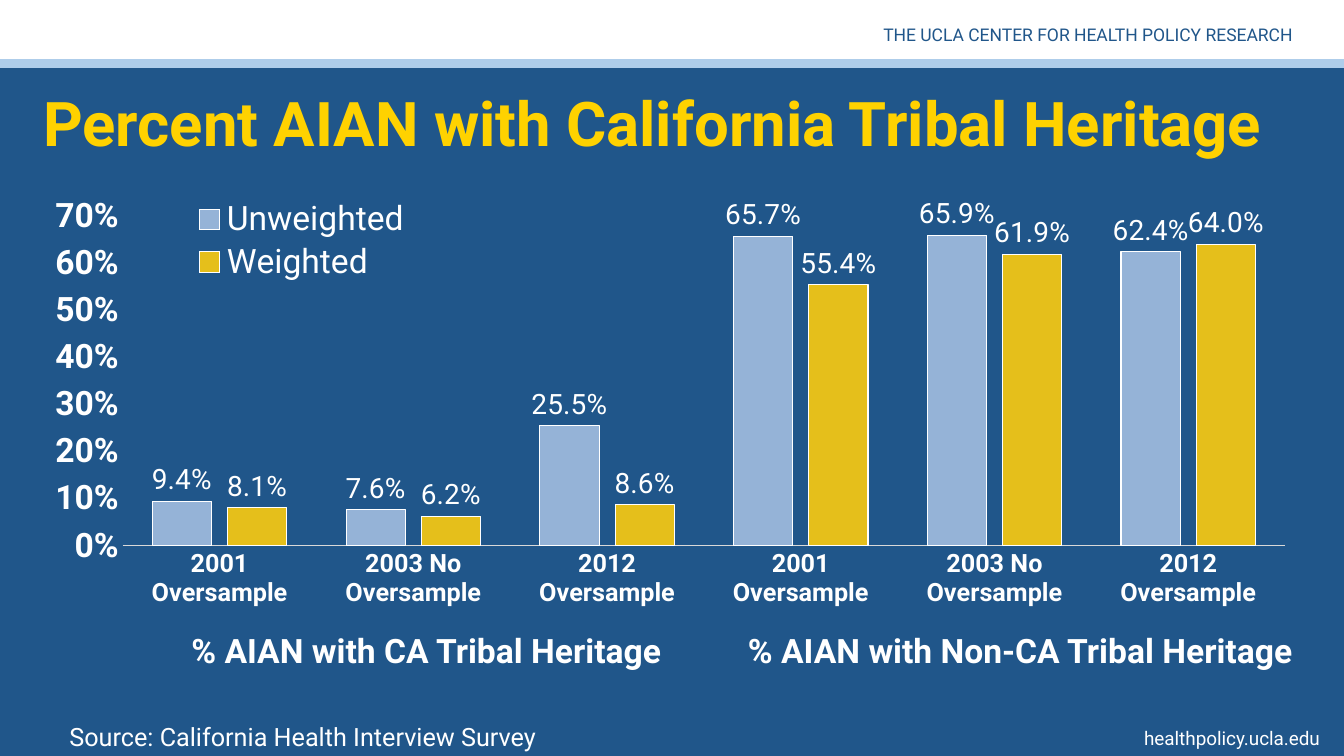
from dataclasses import dataclass

from lxml import etree
from pptx import Presentation
from pptx.chart.data import CategoryChartData
from pptx.dml.color import RGBColor
from pptx.enum.chart import XL_CHART_TYPE, XL_LABEL_POSITION, XL_LEGEND_POSITION, XL_TICK_MARK
from pptx.enum.shapes import MSO_CONNECTOR, MSO_SHAPE
from pptx.enum.text import MSO_ANCHOR, PP_ALIGN
from pptx.oxml.ns import qn
from pptx.util import Inches, Pt

FONT = "Roboto"
NAVY, WHITE, GOLD = "20568A", "FFFFFF", "FFD200"


@dataclass
class Label:
    text: str
    at: tuple[float, float, float, float]
    size: float
    color: str = WHITE
    bold: bool = False
    align: PP_ALIGN = PP_ALIGN.LEFT
    anchor: MSO_ANCHOR = MSO_ANCHOR.TOP


@dataclass
class BarSeries:
    name: str
    values: tuple[float, ...]
    color: str


LABELS = [
    Label("healthpolicy.ucla.edu", (10.75, 7.16, 2.44, 0.34), 13.5, align=PP_ALIGN.RIGHT),
    Label("THE UCLA CENTER FOR HEALTH POLICY RESEARCH", (7.42, 0.19, 5.5, 0.32), 12.5,
          NAVY, align=PP_ALIGN.RIGHT),
    Label("Percent AIAN with California Tribal Heritage", (0.33, 0.58, 13.26, 1.25), 44,
          GOLD, bold=True, anchor=MSO_ANCHOR.MIDDLE),
    Label("% AIAN with CA Tribal Heritage", (1.8, 6.2, 5.54, 0.5), 24, bold=True),
    Label("% AIAN with Non-CA Tribal Heritage", (7.32, 6.2, 6.27, 0.5), 24, bold=True),
    Label("Source: California Health Interview Survey", (0.59, 7.11, 5.24, 0.39), 18),
]
SURVEYS = ["2001 Oversample", "2003 No Oversample", "2012 Oversample"]
SERIES = [
    BarSeries("Unweighted", (0.094, 0.076, 0.255, 0.657, 0.659, 0.624), "95B3D7"),
    BarSeries("Weighted", (0.081, 0.062, 0.086, 0.554, 0.619, 0.64), "E5BF1B"),
]


def rgb(color: str) -> RGBColor:
    return RGBColor.from_string(color)


def set_font(font, size: float, color: str = WHITE, bold: bool = False) -> None:
    font.name = FONT
    font.size = Pt(size)
    font.bold = bold
    font.color.rgb = rgb(color)


def add_text(s, text: str, *, at, size, color, bold, align, anchor) -> None:
    tf = s.shapes.add_textbox(*map(Inches, at)).text_frame
    tf.word_wrap = True
    tf.vertical_anchor = anchor
    p = tf.paragraphs[0]
    p.alignment = align
    r = p.add_run()
    r.text = text
    set_font(r.font, size, color, bold)


def add_header(s) -> None:
    band = s.shapes.add_shape(MSO_SHAPE.RECTANGLE, 0, 0, Inches(13.33), Inches(0.67))
    band.shadow.inherit = False
    band.fill.solid()
    band.fill.fore_color.rgb = rgb(WHITE)
    band.line.fill.background()
    rule = s.shapes.add_connector(MSO_CONNECTOR.STRAIGHT, 0, Inches(0.63),
                                  Inches(13.33), Inches(0.63))
    rule.line.color.rgb = rgb("AECDEA")
    rule.line.width = Pt(6.27)
    etree.SubElement(rule._element.spPr, qn("a:effectLst"))


def set_layout(parent, index: int, x: float, y: float, w: float, h: float,
               inner: bool = False) -> None:
    """Place a chart part by fractions of the chart's size."""
    for old in parent.findall(qn("c:layout")):
        parent.remove(old)
    layout = etree.Element(qn("c:layout"))
    manual = etree.SubElement(layout, qn("c:manualLayout"))
    settings = [("layoutTarget", "inner")] if inner else []
    settings += [("xMode", "edge"), ("yMode", "edge"),
                 ("x", x), ("y", y), ("w", w), ("h", h)]
    for tag, value in settings:
        etree.SubElement(manual, qn(f"c:{tag}")).set("val", str(value))
    parent.insert(index, layout)


def style_axes(chart) -> None:
    for axis, size in ((chart.category_axis, 18), (chart.value_axis, 24)):
        axis.major_tick_mark = axis.minor_tick_mark = XL_TICK_MARK.NONE
        axis.has_major_gridlines = False
        set_font(axis.tick_labels.font, size, bold=True)
    line = chart.category_axis.format.line
    line.color.rgb = rgb("D9D9D9")
    line.width = Pt(0.75)
    axis = chart.value_axis
    axis.format.line.fill.background()
    axis.minimum_scale, axis.maximum_scale, axis.major_unit = 0, 0.7, 0.1
    axis.tick_labels.number_format = "0%"
    axis.tick_labels.number_format_is_linked = False


def style_series(series, color: str) -> None:
    series.format.fill.solid()
    series.format.fill.fore_color.rgb = rgb(color)
    series.format.line.color.rgb = rgb(WHITE)
    series.format.line.width = Pt(0.75)
    labels = series.data_labels
    labels.show_value = True
    labels.position = XL_LABEL_POSITION.OUTSIDE_END
    labels.number_format = "0.0%"
    labels.number_format_is_linked = False
    set_font(labels.font, 20)


def add_heritage_chart(s) -> None:
    data = CategoryChartData(number_format="0.0%")
    data.categories = SURVEYS * 2
    for item in SERIES:
        data.add_series(item.name, item.values)
    chart = s.shapes.add_chart(XL_CHART_TYPE.COLUMN_CLUSTERED, Inches(0.33), Inches(1.85),
                               Inches(12.67), Inches(4.88), data).chart
    chart.has_title = False
    set_font(chart.font, 24)
    style_axes(chart)
    plot = chart.plots[0]
    plot.gap_width, plot.overlap = 100, -27
    plot.vary_by_categories = False
    for series, item in zip(plot.series, SERIES):
        style_series(series, item.color)
    chart.has_legend = True
    legend = chart.legend
    legend.position = XL_LEGEND_POSITION.BOTTOM
    legend.include_in_layout = False
    set_font(legend.font, 24)
    set_layout(legend._element, 1, 0.12, 0.02, 0.18, 0.18)
    set_layout(chart._chartSpace.chart.plotArea, 0, 0.07, 0.06, 0.91, 0.67, inner=True)


def main() -> None:
    prs = Presentation()
    prs.slide_width, prs.slide_height = Inches(13.33), Inches(7.5)
    s = prs.slides.add_slide(prs.slide_layouts[6])
    s.background.fill.solid()
    s.background.fill.fore_color.rgb = rgb(NAVY)
    add_header(s)
    add_heritage_chart(s)
    for label in LABELS:
        add_text(s, label.text, at=label.at, size=label.size, color=label.color,
                 bold=label.bold, align=label.align, anchor=label.anchor)
    prs.save("out.pptx")


if __name__ == "__main__":
    main()
